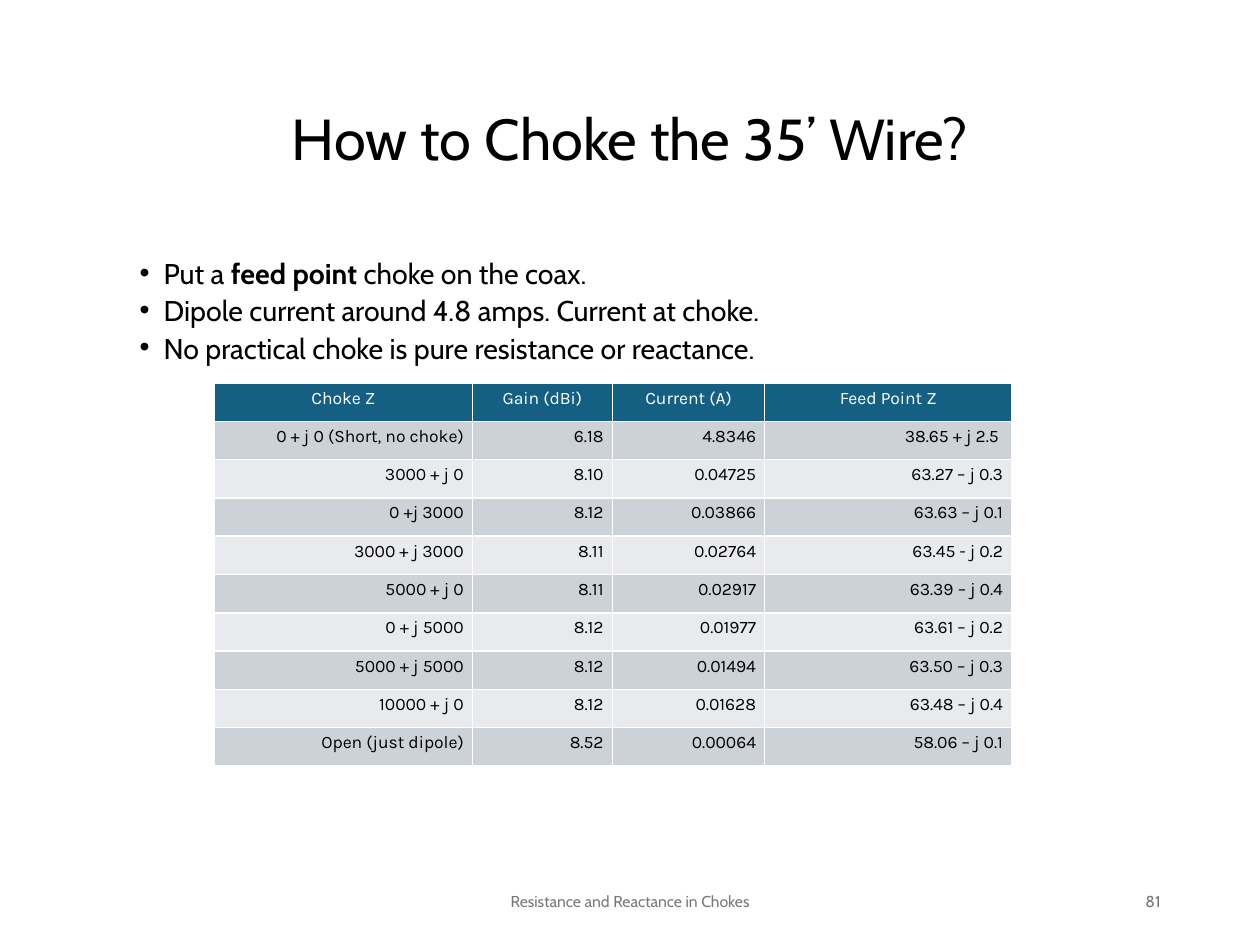
from dataclasses import dataclass

from lxml import etree
from pptx import Presentation
from pptx.dml.color import RGBColor
from pptx.enum.text import MSO_ANCHOR, MSO_AUTO_SIZE, PP_ALIGN
from pptx.oxml.ns import qn
from pptx.util import Inches, Pt

LEFT, CENTER, RIGHT = PP_ALIGN.LEFT, PP_ALIGN.CENTER, PP_ALIGN.RIGHT
TOP, MIDDLE = MSO_ANCHOR.TOP, MSO_ANCHOR.MIDDLE
NO_FIT = MSO_AUTO_SIZE.NONE
TITLE_ONLY = 5
COLUMNS, ROWS = 10, 7.5
UNIT = Inches(1)


@dataclass(frozen=True)
class Theme:
    font: str = "Cabin"
    table_font: str = "Karla"
    title: float = 33
    body: float = 16.3
    table: float = 10
    footer: float = 9
    ink: str = "000000"
    muted: str = "797979"
    paper: str = "FFFFFF"
    header: str = "156082"
    bands: tuple = ("CCD2D8", "E8EAED")


THEME = Theme()

BULLETS = [
    [("Put a ", False), ("feed point ", True), ("choke on the coax.", False)],
    [("Dipole current around 4.8 amps. Current at choke.", False)],
    [("No practical choke is pure resistance or reactance.", False)],
]
TABLE_COLUMNS = [2.05, 1.11, 1.21, 1.96]
CHOKES = [
    ("Choke Z", "Gain (dBi)", "Current (A)", "Feed Point Z"),
    ("0 + j 0 (Short, no choke)", "6.18", "4.8346", "38.65 + j 2.5 "),
    ("3000 + j 0", "8.10", "0.04725", "63.27 – j 0.3"),
    ("0 +j 3000", "8.12", "0.03866", "63.63 – j 0.1"),
    ("3000 + j 3000", "8.11", "0.02764", "63.45 - j 0.2"),
    ("5000 + j 0", "8.11", "0.02917", "63.39 – j 0.4"),
    ("0 + j 5000", "8.12", "0.01977", "63.61 – j 0.2"),
    ("5000 + j 5000", "8.12", "0.01494", "63.50 – j 0.3"),
    ("10000 + j 0", "8.12", "0.01628", "63.48 – j 0.4"),
    ("Open (just dipole)", "8.52", "0.00064", "58.06 – j 0.1"),
]


def grid(*lengths):
    return [int(length * UNIT) for length in lengths]


def apply(target, values):
    for name, value in values.items():
        setattr(target, name, value)


def add_run(p, text, size, color=THEME.ink, font=THEME.font, bold=False):
    r = p.add_run()
    r.text = text
    apply(r.font, {"name": font, "size": Pt(size), "bold": bold})
    r.font.color.rgb = RGBColor.from_string(color)


def format_frame(tf, anchor):
    apply(tf, {"word_wrap": True, "auto_size": NO_FIT, "vertical_anchor": anchor})


def add_title(s, text, box):
    sp = s.shapes.title
    apply(sp, dict(zip(("left", "top", "width", "height"), grid(*box))))
    format_frame(sp.text_frame, MIDDLE)
    p = sp.text_frame.paragraphs[0]
    apply(p, {"alignment": CENTER, "line_spacing": 0.9})
    add_run(p, text, THEME.title)


def add_text(s, box, anchor=MIDDLE):
    tf = s.shapes.add_textbox(*grid(*box)).text_frame
    format_frame(tf, anchor)
    return tf


def set_bullet(p, indent):
    p_pr = p._p.get_or_add_pPr()
    p_pr.set("marL", str(Inches(indent)))
    p_pr.set("indent", str(-Inches(indent)))
    etree.SubElement(p_pr, qn("a:buFont"), typeface="Arial")
    etree.SubElement(p_pr, qn("a:buChar"), char="•")


def add_bullets(s, items, box):
    tf = add_text(s, box, TOP)
    for i, item in enumerate(items):
        p = tf.add_paragraph() if i else tf.paragraphs[0]
        apply(p, {"alignment": LEFT, "line_spacing": 0.7, "space_before": Pt(7.5)})
        set_bullet(p, 0.19)
        for text, bold in item:
            add_run(p, text, THEME.body, bold=bold)


def add_footer(s, text, box, alignment):
    p = add_text(s, box).paragraphs[0]
    p.alignment = alignment
    add_run(p, text, THEME.footer, THEME.muted)


def fill_cell(cell, text, fill, color, alignment):
    margins = dict.fromkeys(("margin_left", "margin_right"), Inches(0.07))
    margins.update(dict.fromkeys(("margin_top", "margin_bottom"), Inches(0.04)))
    apply(cell, margins)
    cell.fill.solid()
    cell.fill.fore_color.rgb = RGBColor.from_string(fill)
    p = cell.text_frame.paragraphs[0]
    p.alignment = alignment
    add_run(p, text, THEME.table, color, THEME.table_font)


def add_data_table(s, rows, widths, left, top, height):
    box = grid(left, top, sum(widths), height)
    table = s.shapes.add_table(len(rows), len(widths), *box).table
    for column, width in zip(table.columns, grid(*widths)):
        column.width = width
    for i, row in enumerate(rows):
        if i == 0:
            style = (THEME.header, THEME.paper, CENTER)
        else:
            style = (THEME.bands[(i - 1) % 2], THEME.ink, RIGHT)
        for j, text in enumerate(row):
            fill_cell(table.cell(i, j), text, *style)


def main():
    prs = Presentation()
    prs.slide_width, prs.slide_height = grid(COLUMNS, ROWS)
    s = prs.slides.add_slide(prs.slide_layouts[TITLE_ONLY])
    add_title(s, "How to Choke the 35’ Wire?", (0.69, 0.4, 8.62, 1.45))
    add_bullets(s, BULLETS, (1.01, 2.06, 6.75, 0.92))
    add_footer(s, "Resistance and Reactance in Chokes", (3.31, 6.95, 3.38, 0.4), CENTER)
    add_footer(s, "81", (7.06, 6.95, 2.25, 0.4), RIGHT)
    add_data_table(s, CHOKES, TABLE_COLUMNS, 1.7, 3.04, 3.04)
    prs.save("out.pptx")


if __name__ == "__main__":
    main()
